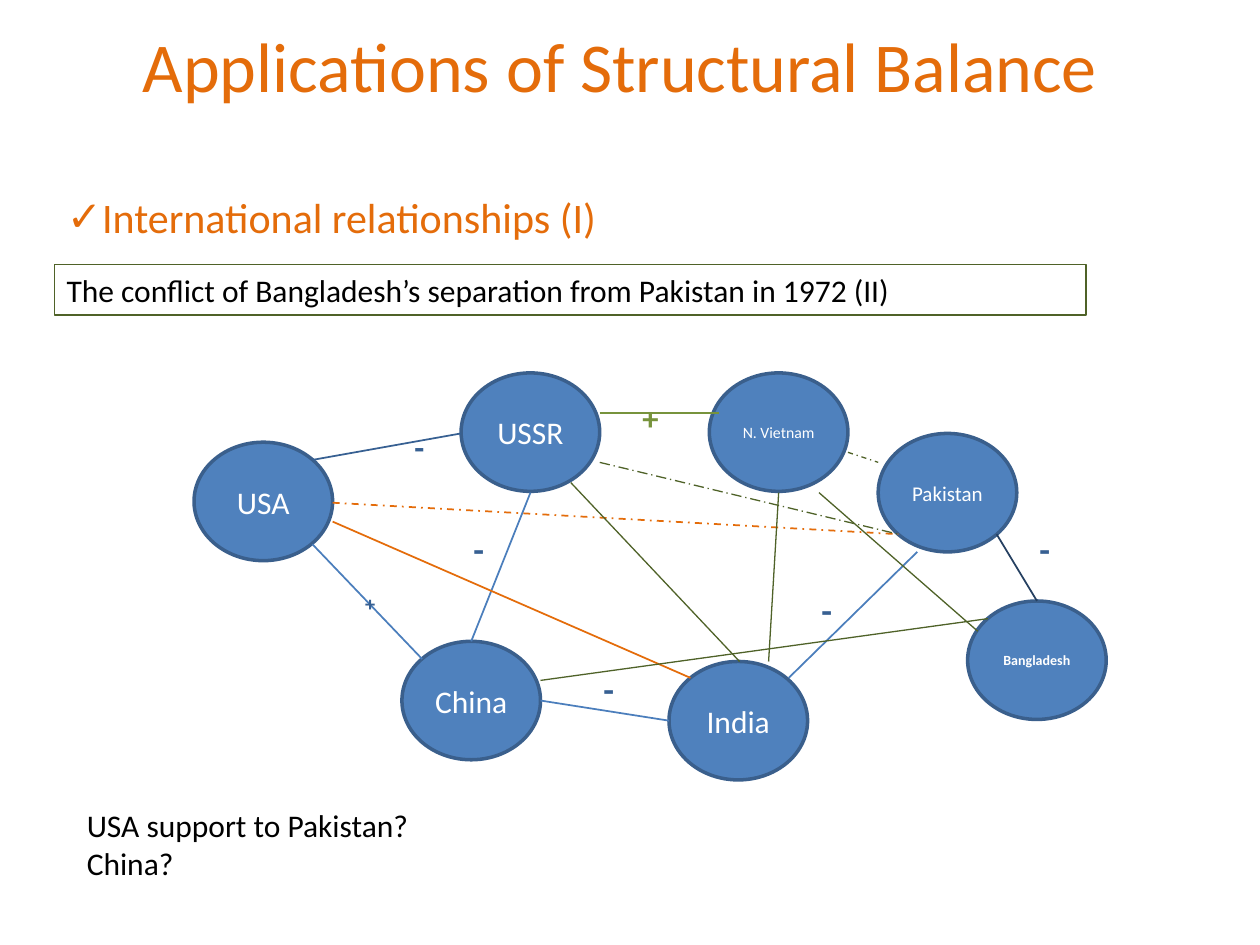
import pptx
import pptx.dml.color
import pptx.enum.dml
import pptx.enum.shapes
import pptx.enum.text
import pptx.oxml.ns
import pptx.util
import lxml.etree

Inches = pptx.util.Inches
RGBColor = pptx.dml.color.RGBColor
ALIGN = pptx.enum.text.PP_ALIGN
ANCHOR = pptx.enum.text.MSO_ANCHOR
SHAPE = pptx.enum.shapes.MSO_SHAPE
DASH = pptx.enum.dml.MSO_LINE
qn = pptx.oxml.ns.qn

ORANGE = RGBColor(0xE4, 0x6C, 0x0A)
BLACK = RGBColor(0x00, 0x00, 0x00)
WHITE = RGBColor(0xFF, 0xFF, 0xFF)
NODE_FILL = RGBColor(0x4F, 0x81, 0xBD)
NODE_LINE = RGBColor(0x3A, 0x5F, 0x8C)
BLUE = RGBColor(0x4B, 0x7E, 0xBC)
DARK_BLUE = RGBColor(0x37, 0x60, 0x92)
NAVY = RGBColor(0x25, 0x40, 0x61)
GREEN = RGBColor(0x77, 0x93, 0x3C)
DARK_GREEN = RGBColor(0x4F, 0x62, 0x28)

NODE_WIDTH, NODE_HEIGHT = 1.1, 0.94


def place(shape, left, top, width, height):
    shape.left, shape.top = Inches(left), Inches(top)
    shape.width, shape.height = Inches(width), Inches(height)


def write(shape, text, size, color, align=ALIGN.LEFT, anchor=ANCHOR.TOP, bold=False, wrap=True):
    text_frame = shape.text_frame
    text_frame.text = text
    text_frame.word_wrap = wrap
    text_frame.auto_size = pptx.enum.text.MSO_AUTO_SIZE.NONE
    text_frame.vertical_anchor = anchor
    for paragraph in text_frame.paragraphs:
        paragraph.alignment = align
        paragraph.space_before = pptx.util.Pt(0)
        for run in paragraph.runs:
            run.font.name = "Calibri"
            run.font.size = pptx.util.Pt(size)
            run.font.bold = bold
            run.font.color.rgb = color


presentation = pptx.Presentation()
presentation.slide_width = Inches(10)
presentation.slide_height = Inches(7.5)
slide = presentation.slides.add_slide(presentation.slide_layouts[1])
shapes = slide.shapes

# Title
title = shapes.title
place(title, 0.59, 0.13, 8.66, 0.77)
write(title, "Applications of Structural Balance", 40, ORANGE, ALIGN.CENTER)

# Check-marked topic
topic = slide.placeholders[1]
place(topic, 0.43, 1.47, 6.77, 0.5)
write(topic, "International relationships (I)", 24, ORANGE)
properties = topic.text_frame.paragraphs[0]._p.get_or_add_pPr()
properties.set("marL", str(Inches(0.28)))
properties.set("indent", str(-Inches(0.28)))
lxml.etree.SubElement(properties, qn("a:buChar")).set("char", "✓")

# Framed subject line
subject = shapes.add_textbox(Inches(0.43), Inches(2.1), Inches(8.19), Inches(0.4))
subject.line.color.rgb = DARK_GREEN
subject.line.width = pptx.util.Pt(0.75)
write(subject, "The conflict of Bangladesh’s separation from Pakistan in 1972 (II)", 18, BLACK)

# Countries: name, left, top, text size
countries = [
    ("USA", 1.54, 3.51, 18),
    ("USSR", 3.66, 2.96, 18),
    ("China", 3.19, 5.09, 18),
    ("India", 5.31, 5.25, 18),
    ("Pakistan", 6.97, 3.44, 12),
    ("Bangladesh", 7.68, 4.77, 8),
    ("N. Vietnam", 5.63, 2.96, 9),
]
for name, left, top, size in countries:
    country = shapes.add_shape(SHAPE.OVAL, Inches(left), Inches(top),
                               Inches(NODE_WIDTH), Inches(NODE_HEIGHT))
    country.shadow.inherit = False
    country.fill.solid()
    country.fill.fore_color.rgb = NODE_FILL
    country.line.color.rgb = NODE_LINE
    country.line.width = pptx.util.Pt(2)
    write(country, name, size, WHITE, ALIGN.CENTER, ANCHOR.MIDDLE,
          bold=name == "Bangladesh", wrap=False)

# Relations: start x, y, end x, y, color, width, dash
relations = [
    (4.21, 3.91, 3.74, 5.09, BLUE, 1, None),              # USSR - China
    (4.29, 5.56, 5.31, 5.72, BLUE, 1, None),              # China - India
    (2.48, 4.32, 3.35, 5.23, BLUE, 1, None),              # USA - China
    (7.28, 4.38, 6.26, 5.38, BLUE, 1, None),              # Pakistan - India
    (2.64, 4.14, 5.48, 5.38, ORANGE, 1, None),            # USA - India
    (2.64, 3.99, 7.13, 4.24, ORANGE, 1, DASH.DASH_DOT),   # USA - Pakistan
    (2.48, 3.65, 3.66, 3.44, DARK_BLUE, 1, None),         # USA - USSR
    (4.76, 3.28, 5.71, 3.28, GREEN, 1, None),             # USSR - N. Vietnam
    (7.91, 4.24, 8.23, 4.77, NAVY, 1, None),              # Pakistan - Bangladesh
    (4.53, 3.83, 5.87, 5.25, DARK_GREEN, 0.75, None),     # USSR - India
    (6.18, 3.91, 6.1, 5.25, DARK_GREEN, 0.75, None),      # N. Vietnam - India
    (6.73, 3.59, 6.97, 3.67, DARK_GREEN, 0.75, DASH.DASH_DOT),       # N. Vietnam - Pakistan
    (6.5, 3.91, 7.76, 5.01, DARK_GREEN, 0.75, None),      # N. Vietnam - Bangladesh
    (4.76, 3.67, 7.13, 4.24, DARK_GREEN, 0.75, DASH.LONG_DASH_DOT),  # USSR - Pakistan
    (4.29, 5.4, 7.84, 4.91, DARK_GREEN, 0.75, None),      # China - Bangladesh
]
for x1, y1, x2, y2, color, width, dash in relations:
    relation = shapes.add_connector(pptx.enum.shapes.MSO_CONNECTOR.STRAIGHT,
                                    Inches(x1), Inches(y1), Inches(x2), Inches(y2))
    relation.line.color.rgb = color
    relation.line.width = pptx.util.Pt(width)
    if dash:
        relation.line.dash_style = dash
    lxml.etree.SubElement(relation._element.spPr, qn("a:effectLst"))

# Signs: text, left, top, height, size, color, lowered below the baseline
signs = [
    ("-", 3.66, 4.14, 0.44, 20, DARK_BLUE, False),
    ("-", 4.69, 5.25, 0.44, 20, DARK_BLUE, False),
    ("+", 2.8, 4.46, 0.33, 20, DARK_BLUE, True),
    ("-", 6.42, 4.62, 0.44, 20, DARK_BLUE, False),
    ("-", 3.19, 3.04, 0.46, 32, DARK_BLUE, True),
    ("+", 5, 2.81, 0.46, 32, GREEN, True),
    ("-", 8.15, 4.14, 0.44, 20, DARK_BLUE, False),
]
for text, left, top, height, size, color, lowered in signs:
    sign = shapes.add_textbox(Inches(left), Inches(top), Inches(0.47), Inches(height))
    write(sign, text, size, color, bold=True)
    if lowered:
        run = sign.text_frame.paragraphs[0].runs[0]
        run._r.get_or_add_rPr().set("baseline", "-25000")

# Closing questions
questions = shapes.add_textbox(Inches(0.59), Inches(6.35), Inches(4.25), Inches(0.71))
write(questions, "USA support to Pakistan?\nChina?", 18, BLACK)

presentation.save("out.pptx")
